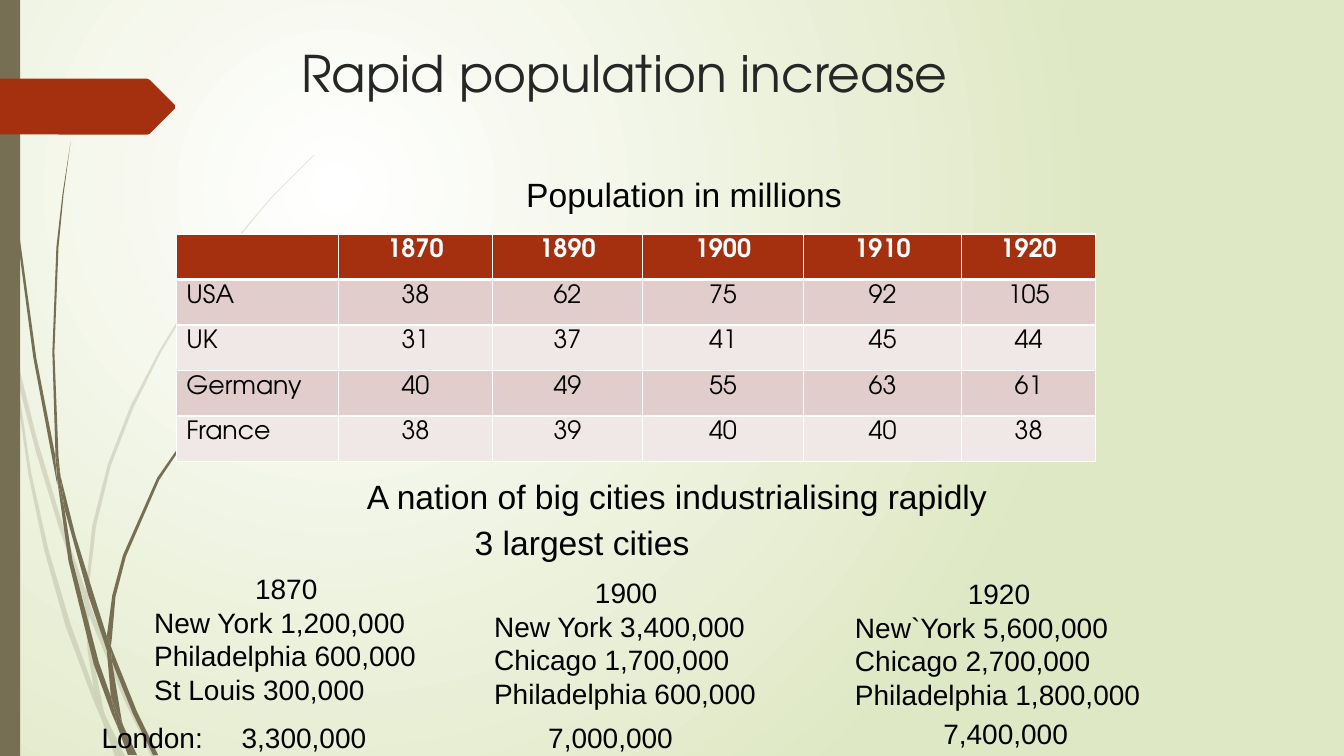
from lxml.etree import SubElement
from pptx import Presentation
from pptx.dml.color import RGBColor
from pptx.enum.shapes import MSO_SHAPE
from pptx.enum.text import MSO_ANCHOR, MSO_AUTO_SIZE, PP_ALIGN
from pptx.oxml.ns import qn
from pptx.util import Pt

THEME = {
    "olive": "766F54", "rust": "A53010", "title": "262626", "text": "000000",
    "white": "FFFFFF", "glow_edge": "DFE8C4", "bands": ("E1CDCC", "F0E8E7"),
    "display": "TeX Gyre Adventor", "body": "Arial",
    "title_size": 36, "heading_size": 24, "city_size": 20, "table_size": 18,
}
SLIDE_WIDTH, SLIDE_HEIGHT = 960, 540

TITLE = ("Rapid population increase", (208, 26.5, 702, 57))
POPULATION = [
    ("", "1870", "1890", "1900", "1910", "1920"),
    ("USA", "38", "62", "75", "92", "105"),
    ("UK", "31", "37", "41", "45", "44"),
    ("Germany", "40", "49", "55", "63", "61"),
    ("France", "38", "39", "40", "40", "38"),
]
TABLE_LEFT, TABLE_TOP, ROW_HEIGHT = 126, 167.2, 32.5
COLUMN_WIDTHS = (115.8, 110, 107.2, 115, 113, 95.7)

# Text, then left, top, width, height
HEADINGS = [
    ("A nation of big cities industrialising rapidly", (255, 336.4, 462, 36)),
    ("Population in millions", (368.8, 120.8, 249, 36)),
    ("3 largest cities", (332, 369.4, 169, 36)),
]
LARGEST_CITIES = [
    (("1870", "New York 1,200,000", "Philadelphia 600,000", "St Louis 300,000"),
     (103, 404.7, 203, 104.5)),
    (("1900", "New York 3,400,000", "Chicago 1,700,000", "Philadelphia 600,000"),
     (345.8, 407.6, 203, 104.5)),
    (("1920", "New`York 5,600,000", "Chicago 2,700,000", "Philadelphia 1,800,000"),
     (603.6, 408.3, 220, 104.5)),
]
LONDON = [
    ("7,400,000", (666.7, 508, 104.4, 31.5)),
    ("London:\t3,300,000", (65.5, 511, 205, 31.5)),
    ("7,000,000", (384.5, 511, 104.4, 31.5)),
]
LONDON_TAB = 100

# Corner points of each piece of grass, back to front
PALE_GRASS = [
    [(7.9, 252), (6.5, 231.8), (0, 203), (0, 215.3), (7.2, 247.7)],
    [(41.8, 375.8), (60.5, 431.3), (61.2, 421.9), (44.6, 374.4), (26, 312),
     (10.1, 248.4), (12.2, 270.7), (25.9, 323.6)],
    [(66.2, 437), (63.4, 429.1), (63.4, 439.2), (88.6, 499.7), (108, 540),
     (111.6, 540), (91.4, 498.2)],
    [(85.7, 540), (89.3, 540), (75.6, 512)],
    [(67, 491.8), (50.4, 445.7), (34.5, 392.2), (22.3, 337.7), (12.2, 270.7),
     (7.9, 252), (20.2, 338.4), (31.6, 393), (46.8, 447.1), (66.2, 499),
     (72.7, 514), (71.3, 509)],
    [(60.5, 431.3), (62.6, 465.1), (67, 491.8), (69.1, 498.2), (75.6, 512),
     (74.2, 508.3), (65.5, 465.1), (63.4, 439.2)],
    [(63.4, 420.5), (68.6, 375.8), (79.2, 332.6), (95.3, 291.2), (115.2, 251.3),
     (138.4, 212.8), (164.9, 176.4), (193, 142.6), (224.6, 110.9), (224.6, 110.2),
     (193, 141.8), (164.2, 175.7), (137.3, 212), (113.8, 250.6), (93.2, 290.2),
     (77, 331.9), (65.9, 375.7), (61.2, 420.5), (61.2, 421.9), (63.4, 429.1)],
    [(72.7, 514), (82.1, 540), (85.7, 540)],
    [(63.4, 439.2), (63.4, 429.1), (61.2, 421.9), (60.5, 431.3)],
    [(69.1, 498.2), (67, 491.8), (71.3, 509), (72.7, 514), (85.7, 540), (75.6, 512)],
]
DARK_GRASS = [
    [(5, 79.2), (12.2, 167.8), (23.8, 255.6), (40.3, 343.4), (41, 346.3),
     (39.6, 329), (39.6, 326.2), (25.9, 255.6), (13.7, 167), (5.8, 78.5),
     (3.6, 34.6), (2.9, 0), (2.2, 0), (2.9, 34.6)],
    [(63.4, 426.2), (76.3, 464.4), (76.3, 454.3), (67, 424.8), (54, 382.9),
     (43.2, 339.8), (46.1, 363.6)],
    [(81.4, 467.3), (79.2, 461.5), (79.9, 472.3), (95, 509.8), (109.4, 539.3),
     (113, 539.3), (97.9, 508.3)],
    [(79.2, 497.5), (70.6, 473), (51.8, 400.3), (46.1, 363.6), (41, 343.4),
     (49, 401), (67, 474.5), (79.9, 509.8), (84.2, 519.8), (83.5, 516.2)],
    [(43.2, 339.8), (41.8, 326.2), (38.9, 251.3), (41.8, 176.4), (45.4, 139),
     (50.4, 101.5), (44.6, 139), (40.3, 176.4), (37.4, 251.3), (39.6, 323.3)],
    [(95.8, 539.3), (97.9, 539.3), (87.8, 517.7)],
    [(41, 343.4), (46.1, 363.6), (43.2, 339.8), (39.6, 323.3), (39.6, 326.2)],
    [(79.9, 455.8), (82.5, 426.3), (90, 397.4), (113.8, 342.7), (147.6, 292.3),
     (166.3, 269.3), (187.5, 247.7), (166.3, 268.6), (146.9, 291.6), (112.3, 341.3),
     (87.8, 396.7), (80.2, 425.3), (76.3, 454.3), (79.2, 461.5)],
    [(84.2, 519.8), (91.4, 539.3), (94.3, 539.3)],
    [(76.3, 464.4), (79.2, 497.5), (83.5, 508.3), (87.8, 517.7), (87.1, 515.5),
     (79.9, 472.3), (78.5, 468.7)],
    [(76.3, 464.4), (78.5, 468.7), (79.9, 472.3), (79.2, 461.5), (76.3, 454.3)],
    [(83.5, 508.3), (79.2, 497.5), (83.5, 516.2), (84.2, 519.8), (93.6, 539.3),
     (95.8, 539.3), (87.8, 517.7)],
]
PALE_OPACITY = 20
TITLE_ARROW = [(0, 56.2), (105, 56.2), (107, 57), (125, 75), (125, 77.5),
               (107, 95.5), (105, 96.2), (0, 96)]


def color(name):
    return RGBColor.from_string(THEME.get(name, name))


def paint(shape, fill, opacity=100):
    shape.shadow.inherit = False
    shape.fill.solid()
    shape.fill.fore_color.rgb = color(fill)
    shape.line.fill.background()
    if opacity < 100:
        rgb = shape.fill._xPr.find(".//" + qn("a:srgbClr"))
        SubElement(rgb, qn("a:alpha"), val=str(opacity * 1000))


def add_outline(slide, points, fill, opacity=100):
    corners = [(Pt(x), Pt(y)) for x, y in points]
    builder = slide.shapes.build_freeform(*corners[0])
    builder.add_line_segments(corners[1:], close=True)
    paint(builder.convert_to_shape(), fill, opacity)


def add_run(paragraph, text, font, size, fill, bold=False):
    run = paragraph.add_run()
    run.text = text
    run.font.name, run.font.size, run.font.bold = font, Pt(size), bold
    run.font.color.rgb = color(fill)


def add_text(slide, lines, box, size, font=THEME["body"], fill="text", wrap=False):
    """Add a text box; the first of several lines is centred."""
    frame = slide.shapes.add_textbox(*map(Pt, box)).text_frame
    frame.word_wrap, frame.auto_size = wrap, MSO_AUTO_SIZE.NONE
    frame.vertical_anchor = MSO_ANCHOR.TOP
    for index, line in enumerate(lines):
        paragraph = frame.add_paragraph() if index else frame.paragraphs[0]
        centred = len(lines) > 1 and index == 0
        paragraph.alignment = PP_ALIGN.CENTER if centred else PP_ALIGN.LEFT
        if "\t" in line:
            tabs = SubElement(paragraph._p.get_or_add_pPr(), qn("a:tabLst"))
            SubElement(tabs, qn("a:tab"), pos=str(Pt(LONDON_TAB)), algn="l")
        add_run(paragraph, line, font, size, fill)


def style_cell(cell, fill, header):
    properties = cell._tc.get_or_add_tcPr()
    for side in "LRTB":
        width = 3 if header and side == "B" else 1
        border = SubElement(properties, qn("a:ln" + side), w=str(Pt(width)))
        solid = SubElement(border, qn("a:solidFill"))
        SubElement(solid, qn("a:srgbClr"), val=THEME["white"])
    cell.fill.solid()
    cell.fill.fore_color.rgb = color(fill)


def add_population_table(slide):
    table = slide.shapes.add_table(
        len(POPULATION), len(COLUMN_WIDTHS), Pt(TABLE_LEFT), Pt(TABLE_TOP),
        Pt(sum(COLUMN_WIDTHS)), Pt(ROW_HEIGHT * len(POPULATION))).table
    for column, width in zip(table.columns, COLUMN_WIDTHS):
        column.width = Pt(width)
    for row, values in enumerate(POPULATION):
        table.rows[row].height = Pt(ROW_HEIGHT)
        header = row == 0
        for column, value in enumerate(values):
            cell = table.cell(row, column)
            style_cell(cell, "rust" if header else THEME["bands"][(row - 1) % 2], header)
            paragraph = cell.text_frame.paragraphs[0]
            paragraph.alignment = PP_ALIGN.CENTER if column else PP_ALIGN.LEFT
            if value:
                add_run(paragraph, value, THEME["display"], THEME["table_size"],
                        "white" if header else "text", header)


def set_glow(slide):
    """Fill the background with a round gradient centred at the upper left."""
    fill = slide.background.fill
    fill.gradient()
    for stop, name in zip(fill.gradient_stops, ("white", "glow_edge")):
        stop.color.rgb = color(name)
    gradient = fill._xPr.find(qn("a:gradFill"))
    gradient.remove(gradient.find(qn("a:lin")))
    circle = SubElement(gradient, qn("a:path"))
    circle.set("path", "circle")
    SubElement(circle, qn("a:fillToRect"), l="50000", t="50000", r="100000", b="100000")


def main():
    presentation = Presentation()
    presentation.slide_width, presentation.slide_height = Pt(SLIDE_WIDTH), Pt(SLIDE_HEIGHT)
    slide = presentation.slides.add_slide(presentation.slide_layouts[6])
    set_glow(slide)
    for pieces, opacity in ((PALE_GRASS, PALE_OPACITY), (DARK_GRASS, 100)):
        for points in pieces:
            add_outline(slide, points, "olive", opacity)
    side_bar = slide.shapes.add_shape(
        MSO_SHAPE.RECTANGLE, Pt(0), Pt(0), Pt(14.4), Pt(SLIDE_HEIGHT))
    paint(side_bar, "olive")
    add_outline(slide, TITLE_ARROW, "rust")
    title, title_box = TITLE
    add_text(slide, [title], title_box, THEME["title_size"], THEME["display"], "title", True)
    add_population_table(slide)
    for entries, size in ((HEADINGS, "heading_size"), (LARGEST_CITIES, "city_size"),
                          (LONDON, "city_size")):
        for text, box in entries:
            lines = [text] if isinstance(text, str) else text
            add_text(slide, lines, box, THEME[size])
    presentation.save("out.pptx")


if __name__ == "__main__":
    main()
